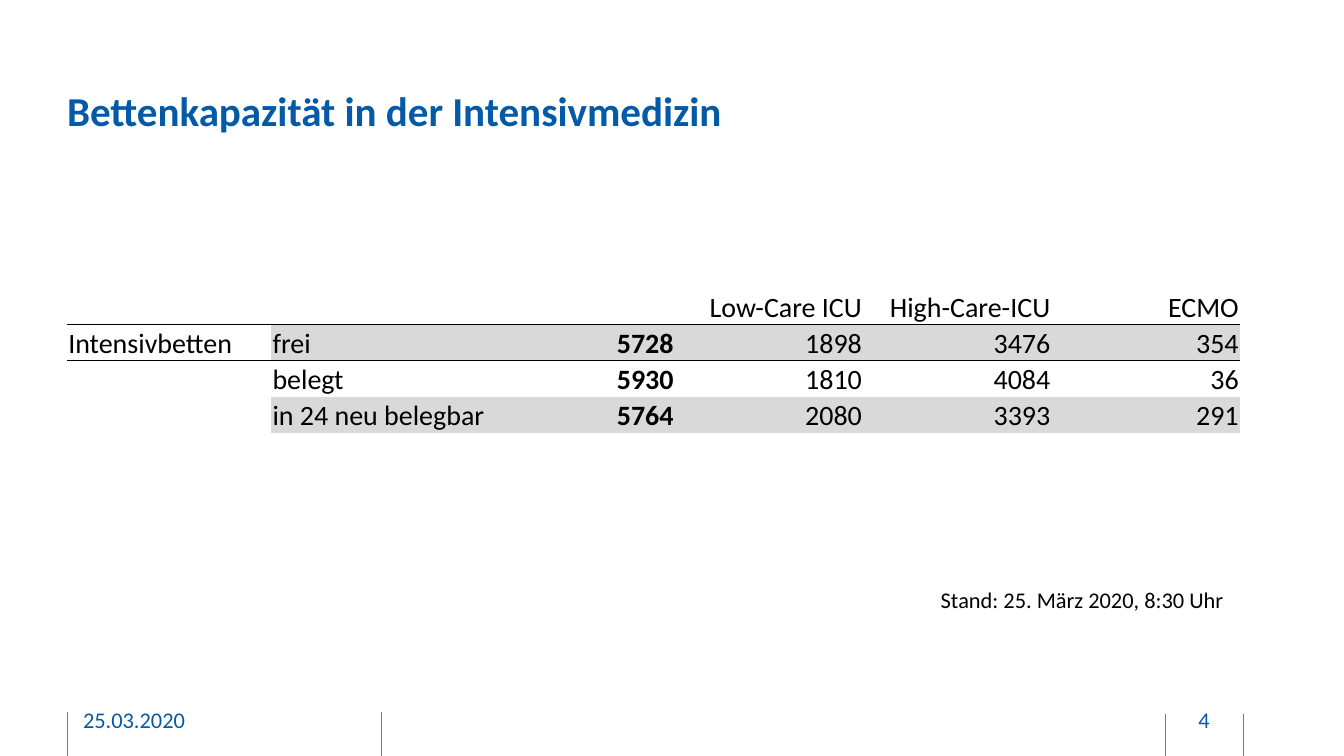
from lxml.etree import SubElement
from pptx import Presentation
from pptx.dml.color import RGBColor
from pptx.enum.shapes import MSO_CONNECTOR as Connector
from pptx.enum.text import MSO_ANCHOR as Anchor, PP_ALIGN as Align
from pptx.oxml import parse_xml
from pptx.oxml.ns import nsdecls, qn
from pptx.util import Cm, Pt

COLORS = {"blue": "045AA6", "rule": "4F81BD", "black": "000000", "band": "D9D9D9"}
FONT = "Calibri"
NO_STYLE = "{2D5ABB26-0587-4C30-8999-92F81FD0307C}"

TITLE = "Bettenkapazität in der Intensivmedizin"
DATE, NUMBER = "25.03.2020", "4"
STATUS = "Stand: 25. März 2020, 8:30 Uhr"
ROWS = [
    ["", "", "", "Low-Care ICU", "High-Care-ICU", "ECMO"],
    ["Intensivbetten", "frei", "5728", "1898", "3476", "354"],
    ["", "belegt", "5930", "1810", "4084", "36"],
    ["", "in 24 neu belegbar", "5764", "2080", "3393", "291"],
]
COLUMN_WIDTHS = [3.86, 5.0, 2.62, 3.56, 3.56, 3.56]
ROW_HEIGHT = 0.68
LEFT, WIDTH = 1.27, 22.17
FOOTER_RULES = [(1.27, 13.46), (7.21, 13.46), (22.02, 13.49), (23.5, 13.49)]
SLIDE_WIDTH, SLIDE_HEIGHT = 25.4, 14.29


def write(frame, text, size=12, color="black", bold=False, align=Align.LEFT,
          anchor=Anchor.MIDDLE, margins=(0, 0.13, 0, 0.13), wrap=True):
    """Fill a text frame with one formatted paragraph."""
    frame.word_wrap = wrap
    frame.vertical_anchor = anchor
    (frame.margin_left, frame.margin_top,
     frame.margin_right, frame.margin_bottom) = map(Cm, margins)
    paragraph = frame.paragraphs[0]
    paragraph.alignment = align
    if not text:
        SubElement(paragraph._p, qn("a:endParaRPr"), sz=str(size * 100))
        return
    run = paragraph.add_run()
    run.text = text
    run.font.name, run.font.size, run.font.bold = FONT, Pt(size), bold
    run.font.color.rgb = RGBColor.from_string(COLORS[color])


def add_text(slide, text, left, top, width, height, **formatting):
    box = slide.shapes.add_textbox(Cm(left), Cm(top), Cm(width), Cm(height))
    write(box.text_frame, text, **formatting)


def add_rule(slide, x, top):
    rule = slide.shapes.add_connector(
        Connector.STRAIGHT, Cm(x), Cm(top), Cm(x), Cm(SLIDE_HEIGHT))
    rule.line.width = Pt(0.5)
    rule.line.color.rgb = RGBColor.from_string(COLORS["rule"])
    SubElement(rule._element.spPr, qn("a:effectLst"))


def add_border(cell, side):
    border = parse_xml(
        f'<a:{side} {nsdecls("a")} w="{Pt(0.5)}"><a:solidFill>'
        f'<a:srgbClr val="{COLORS["black"]}"/></a:solidFill></a:{side}>')
    cell._tc.get_or_add_tcPr().insert(0, border)


def add_bed_table(slide):
    table = slide.shapes.add_table(
        len(ROWS), len(COLUMN_WIDTHS), Cm(LEFT), Cm(5.46),
        Cm(sum(COLUMN_WIDTHS)), Cm(ROW_HEIGHT * len(ROWS))).table
    table.first_row = table.horz_banding = False
    table._tbl.tblPr.find(qn("a:tableStyleId")).text = NO_STYLE
    for column, width in zip(table.columns, COLUMN_WIDTHS):
        column.width = Cm(width)
    for r, texts in enumerate(ROWS):
        table.rows[r].height = Cm(ROW_HEIGHT)
        for c, text in enumerate(texts):
            cell = table.cell(r, c)
            write(cell.text_frame, text, size=15, bold=c == 2,
                  align=Align.RIGHT if c > 1 else Align.LEFT)
            cell.vertical_anchor = Anchor.BOTTOM
            cell.margin_left = cell.margin_top = cell.margin_right = Cm(0.02)
            cell.margin_bottom = 0
            if r % 2 and c:
                cell.fill.solid()
                cell.fill.fore_color.rgb = RGBColor.from_string(COLORS["band"])
            else:
                cell.fill.background()
            if r < 2:
                add_border(cell, "lnT" if r else "lnB")


def main():
    presentation = Presentation()
    presentation.slide_width, presentation.slide_height = Cm(SLIDE_WIDTH), Cm(SLIDE_HEIGHT)
    slide = presentation.slides.add_slide(presentation.slide_layouts[5])
    for x, top in FOOTER_RULES:
        add_rule(slide, x, top)
    title = slide.shapes.title
    title.left, title.top, title.width, title.height = map(Cm, (LEFT, 1.09, WIDTH, 1.98))
    write(title.text_frame, TITLE, size=22, color="blue", bold=True, margins=(0, 0, 0, 0))
    add_text(slide, DATE, 1.57, 13.23, 5.16, 0.76, color="blue")
    add_text(slide, NUMBER, 22.07, 13.23, 1.37, 0.76, color="blue", align=Align.CENTER)
    add_bed_table(slide)
    add_text(slide, STATUS, 17.53, 10.95, 5.92, 0.76, anchor=Anchor.TOP,
             margins=(0.25, 0.13, 0.25, 0.13), wrap=False)
    presentation.save("out.pptx")


if __name__ == "__main__":
    main()
